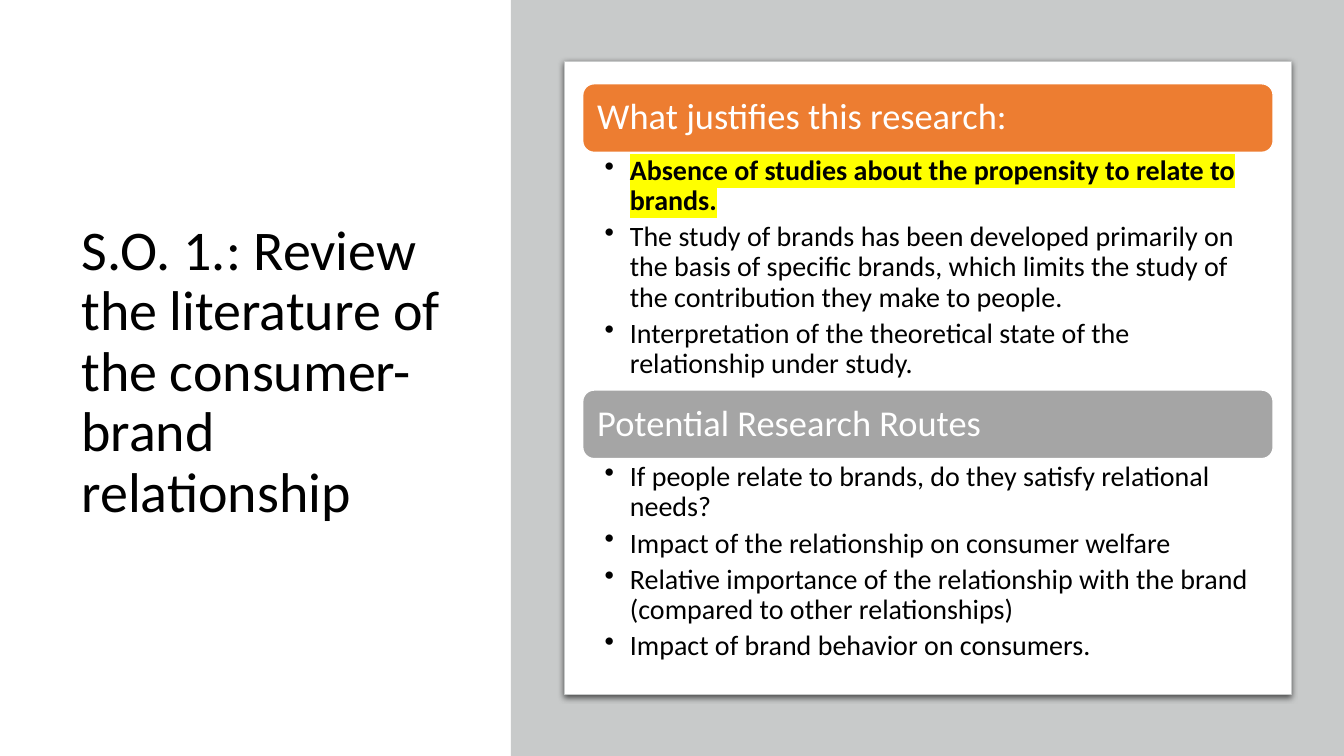
import pptx
import pptx.util
import pptx.dml.color
import pptx.enum.shapes
import pptx.enum.text
import pptx.oxml
import pptx.oxml.ns
from lxml import etree

Pt = pptx.util.Pt
SHAPE = pptx.enum.shapes.MSO_SHAPE
ANCHOR = pptx.enum.text.MSO_ANCHOR
LEFT = pptx.enum.text.PP_ALIGN.LEFT
qn = pptx.oxml.ns.qn

FONT = "Calibri"
BLACK, WHITE, GREY = "000000", "FFFFFF", "C8CACA"
SECTION_LEFT, SECTION_WIDTH, HEADING_HEIGHT = 416.2, 493.2, 49

SECTIONS = [
    (59.8, 169.2, "ED7D31", "What justifies this research:", [
        ("Absence of studies about the propensity to relate to brands.", True),
        ("The study of brands has been developed primarily on the basis of "
         "specific brands, which limits the study of the contribution they "
         "make to people.", False),
        ("Interpretation of the theoretical state of the relationship under "
         "study.", False),
    ]),
    (278.6, 152.6, "A5A5A5", "Potential Research Routes", [
        ("If people relate to brands, do they satisfy relational needs?", False),
        ("Impact of the relationship on consumer welfare", False),
        ("Relative importance of the relationship with the brand (compared "
         "to other relationships)", False),
        ("Impact of brand behavior on consumers.", False),
    ]),
]


def rgb(color):
    return pptx.dml.color.RGBColor.from_string(color)


def add_child(parent, tag, **attrs):
    return etree.SubElement(parent, qn(tag), attrs)


def set_attrs(obj, values):
    for name, value in values.items():
        setattr(obj, name, value)


def format_frame(tf, anchor, left, top, right, bottom):
    set_attrs(tf, {
        "word_wrap": True,
        "auto_size": pptx.enum.text.MSO_AUTO_SIZE.NONE,
        "vertical_anchor": anchor,
        "margin_left": Pt(left), "margin_top": Pt(top),
        "margin_right": Pt(right), "margin_bottom": Pt(bottom),
    })


def write(p, text, size, color, bold=False, after=0):
    """Fill a paragraph with one formatted run and return the run."""
    set_attrs(p, {"alignment": LEFT, "line_spacing": 0.9,
                  "space_before": Pt(0), "space_after": Pt(after)})
    r = p.add_run()
    r.text = text
    set_attrs(r.font, {"name": FONT, "size": Pt(size), "bold": bold})
    r.font.color.rgb = rgb(color)
    return r


def add_box(s, kind, left, top, width, height, fill, line=None, line_width=1):
    sp = s.shapes.add_shape(kind, Pt(left), Pt(top), Pt(width), Pt(height))
    sp.shadow.inherit = False
    sp.fill.solid()
    sp.fill.fore_color.rgb = rgb(fill)
    if line:
        sp.line.color.rgb = rgb(line)
        sp.line.width = Pt(line_width)
    else:
        sp.line.fill.background()
    return sp


def add_shadow(sp):
    effects = sp._element.spPr.find(qn("a:effectLst"))
    shadow = add_child(effects, "a:outerShdw", blurRad=str(Pt(4.5)),
                       dist=str(Pt(1.5)), dir="5400000", rotWithShape="0")
    color = add_child(shadow, "a:srgbClr", val=BLACK)
    add_child(color, "a:alpha", val="63000")


def add_bullet(p):
    pPr = p._p.get_or_add_pPr()
    pPr.set("marL", str(Pt(18)))
    pPr.set("indent", str(-Pt(18)))
    add_child(pPr, "a:buChar", char="•")


def highlight(r, color):
    mark = etree.Element(qn("a:highlight"))
    add_child(mark, "a:srgbClr", val=color)
    r._r.rPr.find(qn("a:solidFill")).addnext(mark)


def add_title(s, text):
    sp = s.shapes.title
    set_attrs(sp, {"left": Pt(51), "top": Pt(49.7),
                   "width": Pt(288.7), "height": Pt(433.4)})
    format_frame(sp.text_frame, ANCHOR.MIDDLE, 7.2, 3.6, 7.2, 3.6)
    write(sp.text_frame.paragraphs[0], text, 40, BLACK)


def add_section(s, top, body_height, color, heading, bullets):
    sp = add_box(s, SHAPE.ROUNDED_RECTANGLE, SECTION_LEFT, top, SECTION_WIDTH,
                 HEADING_HEIGHT, color, WHITE)
    format_frame(sp.text_frame, ANCHOR.MIDDLE, 8, 8, 8, 8)
    write(sp.text_frame.paragraphs[0], heading, 26, WHITE)

    body = s.shapes.add_textbox(Pt(SECTION_LEFT), Pt(top + HEADING_HEIGHT),
                                Pt(SECTION_WIDTH), Pt(body_height))
    tf = body.text_frame
    format_frame(tf, ANCHOR.TOP, 15.7, 2.6, 14.4, 2.6)
    for i, (text, key_point) in enumerate(bullets):
        p = tf.add_paragraph() if i else tf.paragraphs[0]
        r = write(p, text, 20, BLACK, bold=key_point, after=4.3)
        add_bullet(p)
        if key_point:
            highlight(r, "FFFF00")


def main():
    prs = pptx.Presentation()
    prs.slide_width, prs.slide_height = Pt(960), Pt(540)
    s = prs.slides.add_slide(prs.slide_layouts[5])
    add_title(s, "S.O. 1.: Review the literature of the consumer-brand "
                 "relationship")
    add_box(s, SHAPE.RECTANGLE, 365, 0, 595, 540, GREY)
    card = add_box(s, SHAPE.ROUNDED_RECTANGLE, 403.2, 44, 519, 452, WHITE,
                   GREY, 0.75)
    card.adjustments[0] = 0
    add_shadow(card)
    for section in SECTIONS:
        add_section(s, *section)
    prs.save("out.pptx")


if __name__ == "__main__":
    main()
